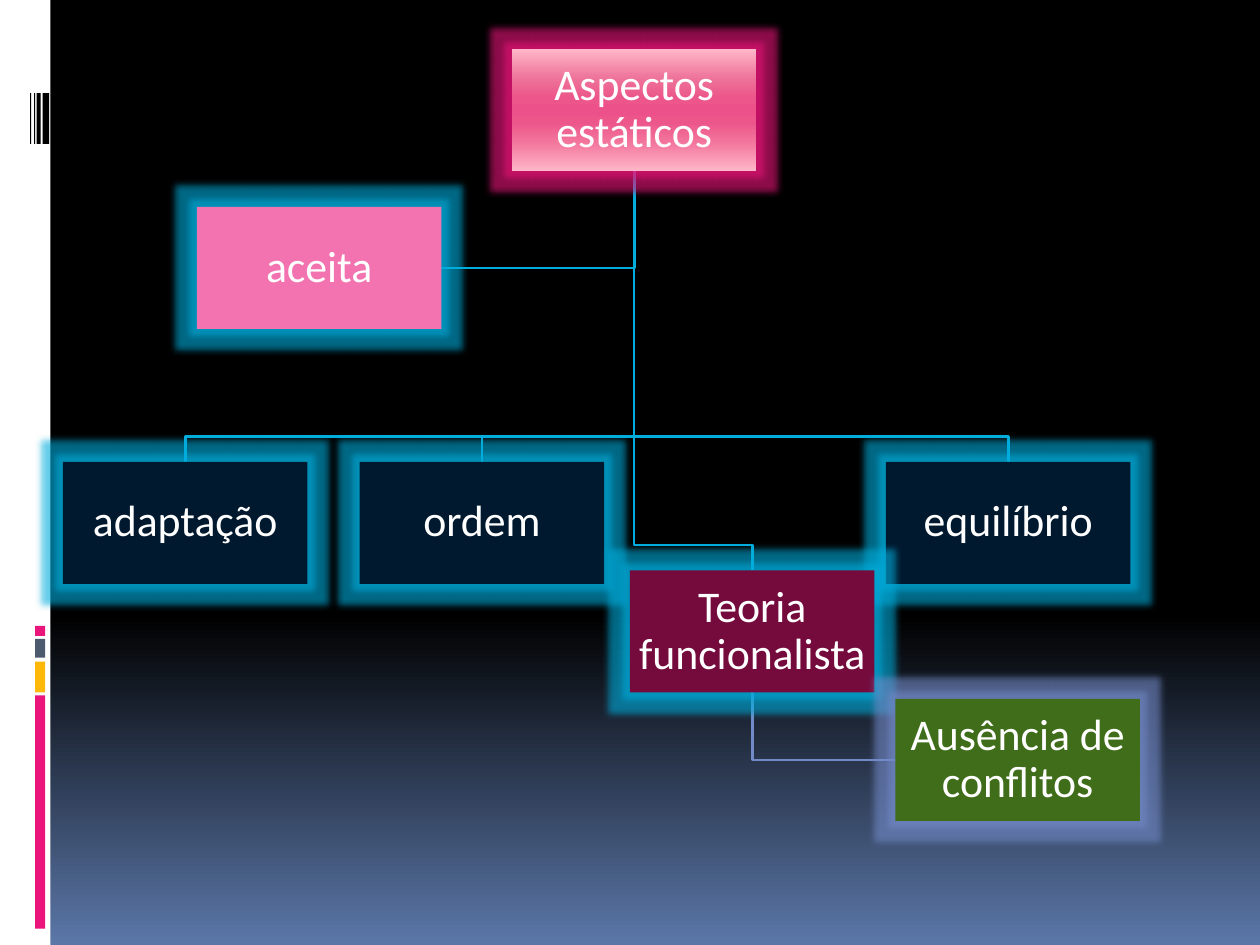
from lxml import etree
from pptx import Presentation
from pptx.dml.color import RGBColor
from pptx.enum.shapes import MSO_SHAPE
from pptx.enum.text import MSO_ANCHOR, PP_ALIGN
from pptx.oxml.ns import qn
from pptx.util import Cm, Pt

RECT = MSO_SHAPE.RECTANGLE
MIDDLE, CENTER = MSO_ANCHOR.MIDDLE, PP_ALIGN.CENTER

# Content, lengths in cm
BACKGROUND = [(0, "000000"), (65, "000000"), (100, "5B77A8")]
PINK = [(0, "FFB6C9"), (25, "ED7198"), (40, "EC568B"), (50, "EC5289"),
        (60, "EC568B"), (75, "F2729A"), (100, "FFB6C9")]
SIDEBAR = [  # left, top, width, height, colour
    (0, 0, 1.02, 19.05, "FFFFFF"),
    (0.71, 14.02, 0.2, 4.7, "EA157A"),
    (0.71, 13.34, 0.2, 0.62, "FEB80A"),
    (0.71, 12.88, 0.2, 0.38, "4E5B6F"),
    (0.71, 12.62, 0.2, 0.2, "EA157A"),
    (0.86, 1.88, 0.13, 1.02, "000000"),
    (0.74, 1.88, 0.08, 1.02, "000000"),
    (0.69, 1.88, 0.02, 1.02, "000000"),
    (0.61, 1.88, 0.02, 1.02, "000000"),
]
BOX_W, BOX_H, DROP = 4.93, 2.46, 0.51
CYAN, BLUE, MAGENTA = "00ADDC", "738AC8", "EA157A"
BOXES = {  # text: left, top, fill, glow
    "Aspectos estáticos": (10.32, 0.99, PINK, MAGENTA),
    "adaptação": (1.27, 9.31, "00192F", CYAN),
    "ordem": (7.25, 9.31, "00192F", CYAN),
    "equilíbrio": (17.86, 9.31, "00192F", CYAN),
    "Teoria funcionalista": (12.7, 11.5, "750B3D", CYAN),
    "Ausência de conflitos": (18.05, 14.09, "3F6D19", BLUE),
    "aceita": (3.97, 4.17, "F273AF", CYAN),
}
ROOT = "Aspectos estáticos"
LINKS = [  # parent, child, child side that is met, colour
    (ROOT, "aceita", "right", CYAN),
    ("Teoria funcionalista", "Ausência de conflitos", "left", BLUE),
    (ROOT, "Teoria funcionalista", "top", CYAN),
    (ROOT, "equilíbrio", "top", CYAN),
    (ROOT, "ordem", "top", CYAN),
    (ROOT, "adaptação", "top", CYAN),
]


def rgb(value):
    return RGBColor.from_string(value)


def set_fill(fill, colour):
    """Solid for a hex string, vertical gradient for a list of stops."""
    if isinstance(colour, str):
        fill.solid()
        fill.fore_color.rgb = rgb(colour)
        return
    fill.gradient()
    fill.gradient_angle = 270
    stops = fill.gradient_stops[0]._gs.getparent()
    for old in list(stops):
        stops.remove(old)
    for pos, value in colour:
        gs = etree.SubElement(stops, qn("a:gs"), pos=str(pos * 1000))
        etree.SubElement(gs, qn("a:srgbClr"), val=value)


def add_rect(left, top, width, height, colour):
    sp = s.shapes.add_shape(RECT, Cm(left), Cm(top), Cm(width), Cm(height))
    sp.shadow.inherit = False
    set_fill(sp.fill, colour)
    sp.line.fill.background()
    return sp


def add_glow(sp, colour):
    effects = sp._element.spPr.find(qn("a:effectLst"))
    glow = etree.SubElement(effects, qn("a:glow"), rad=str(Pt(8)))
    clr = etree.SubElement(glow, qn("a:srgbClr"), val=colour)
    etree.SubElement(clr, qn("a:alpha"), val="60000")


def add_link(parent, child, side, colour):
    px, py = BOXES[parent][:2]
    cx, cy = BOXES[child][:2]
    x, y = px + BOX_W / 2, py + BOX_H
    if side == "top":
        mid = cx + BOX_W / 2
        points = [(x, cy - DROP), (mid, cy - DROP), (mid, cy)]
    else:
        mid = cy + BOX_H / 2
        points = [(x, mid), (cx + BOX_W if side == "right" else cx, mid)]
    fb = s.shapes.build_freeform(Cm(x), Cm(y))
    fb.add_line_segments([(Cm(a), Cm(b)) for a, b in points], close=False)
    sp = fb.convert_to_shape()
    sp.shadow.inherit = False
    sp.fill.background()
    sp.line.color.rgb = rgb(colour)
    sp.line.width = Pt(1.5)


def add_box(text, left, top, colour, glow):
    sp = add_rect(left, top, BOX_W, BOX_H, colour)
    add_glow(sp, glow)
    tf = sp.text_frame
    tf.word_wrap = True
    tf.vertical_anchor = MIDDLE
    tf.margin_left = tf.margin_right = tf.margin_top = tf.margin_bottom = Cm(0.05)
    p = tf.paragraphs[0]
    p.text = text
    p.alignment = CENTER
    p.line_spacing = 0.9
    p.font.name = "Calibri"
    p.font.size = Pt(25)
    p.font.color.rgb = rgb("FFFFFF")


prs = Presentation()
prs.slide_width, prs.slide_height = Cm(25.4), Cm(19.05)
s = prs.slides.add_slide(prs.slide_layouts[6])
set_fill(s.background.fill, BACKGROUND)

# Side band, then links below the boxes
for bar in SIDEBAR:
    add_rect(*bar)
for link in LINKS:
    add_link(*link)
for text, look in BOXES.items():
    add_box(text, *look)

prs.save("out.pptx")
